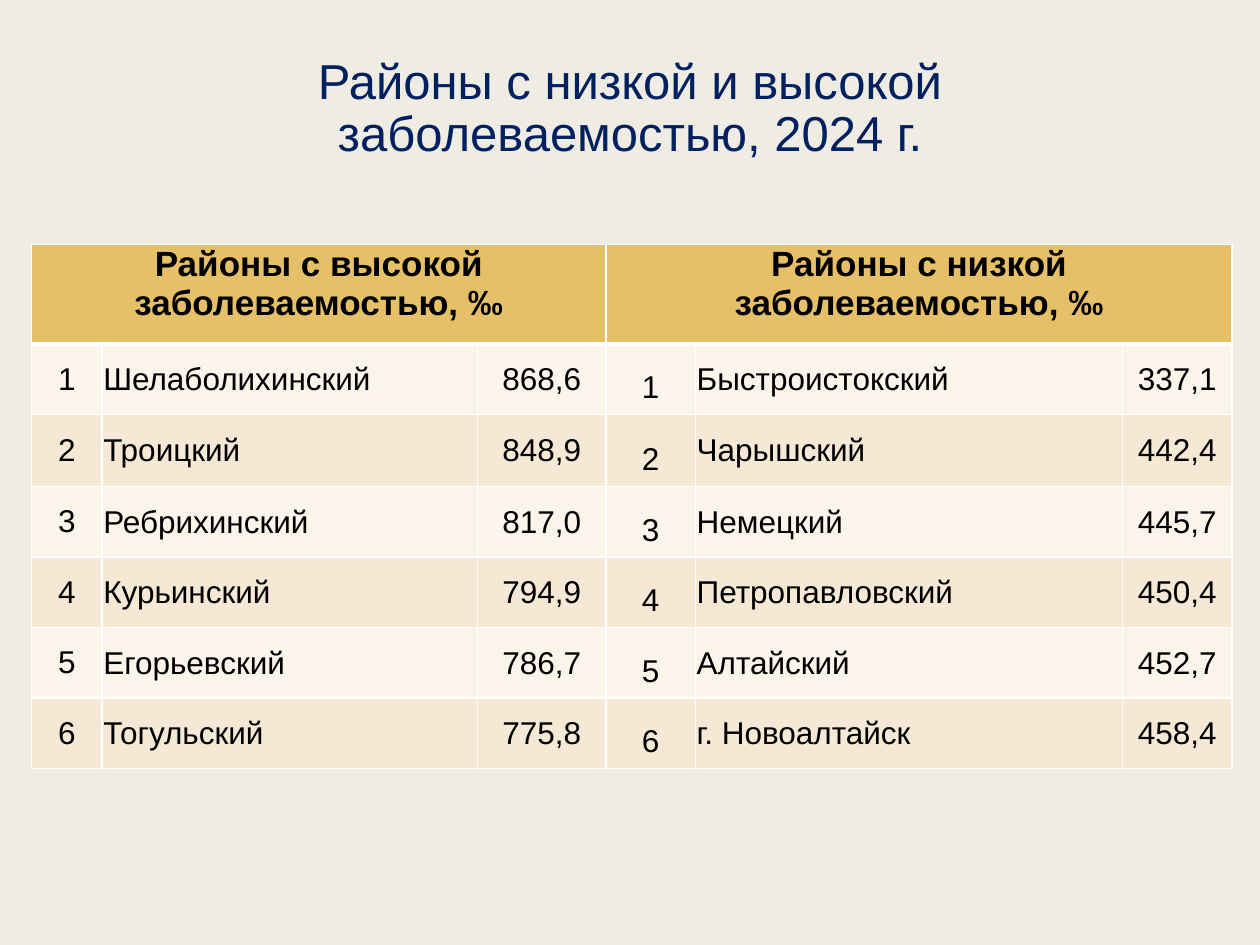
from lxml.etree import SubElement
from pptx import Presentation
from pptx.dml.color import RGBColor as RGB
from pptx.enum.text import MSO_ANCHOR as Anchor, PP_ALIGN as Align
from pptx.oxml.ns import qn
from pptx.util import Inches, Pt

THEME = {
    "font": "Arial", "background": "EFEDE3", "title": "002060", "text": "000000",
    "header": "E6C069", "bands": ("FAF4EB", "F5E8D4"), "border": "FFFFFF",
    "title_size": 28, "header_size": 20, "body_size": 18,
}
HEADERS = ("Районы с высокой заболеваемостью, ‰", "Районы с низкой заболеваемостью, ‰")
HIGH = (("Шелаболихинский", "868,6"), ("Троицкий", "848,9"), ("Ребрихинский", "817,0"),
        ("Курьинский", "794,9"), ("Егорьевский", "786,7"), ("Тогульский", "775,8"))
LOW = (("Быстроистокский", "337,1"), ("Чарышский", "442,4"), ("Немецкий", "445,7"),
       ("Петропавловский", "450,4"), ("Алтайский", "452,7"), ("г. Новоалтайск", "458,4"))
COL_WIDTHS = (0.56, 2.98, 1.02, 0.71, 3.39, 0.87)
ROW_HEIGHTS = (0.79, 0.56, 0.57, 0.56, 0.56, 0.56, 0.56)
# Side margin, top margin, alignment and line spacing of each body column
NAME = (0.01, 0.01, Align.LEFT, None)
VALUE = (0.01, 0.01, Align.CENTER, None)
COL_FORMATS = ((0.07, 0, Align.CENTER, None), NAME, VALUE,
               (0.04, 0, Align.CENTER, 1.5), NAME, VALUE)


def write(p, text, align, spacing, size, color, bold=False):
    p.text = text
    p.alignment, p.line_spacing = align, spacing
    for r in p.runs:
        r.font.color.rgb = RGB.from_string(color)
        for name, value in {"name": THEME["font"], "size": Pt(size), "bold": bold}.items():
            setattr(r.font, name, value)


def style_cell(cell, fill, top, bottom):
    """Border the cell, with top and bottom widths in points, then fill it."""
    tcPr = cell._tc.get_or_add_tcPr()
    for side, width in {"L": 1, "R": 1, "T": top, "B": bottom}.items():
        ln = SubElement(tcPr, qn(f"a:ln{side}"), w=str(Pt(width)))
        solid = SubElement(ln, qn("a:solidFill"))
        SubElement(solid, qn("a:srgbClr"), val=THEME["border"])
    cell.fill.solid()
    cell.fill.fore_color.rgb = RGB.from_string(fill)


prs = Presentation()
prs.slide_width, prs.slide_height = Inches(10), Inches(7.5)
s = prs.slides.add_slide(prs.slide_layouts[6])
s.background.fill.solid()
s.background.fill.fore_color.rgb = RGB.from_string(THEME["background"])

title = s.shapes.add_textbox(Inches(0), Inches(0.36), Inches(10), Inches(1.02))
tf = title.text_frame
tf.word_wrap = True
tf.vertical_anchor = Anchor.MIDDLE
write(tf.paragraphs[0], "Районы с низкой и высокой\vзаболеваемостью, 2024 г.",
      Align.CENTER, 0.89, THEME["title_size"], THEME["title"])

table = s.shapes.add_table(len(ROW_HEIGHTS), len(COL_WIDTHS), Inches(0.25), Inches(1.94),
                           Inches(sum(COL_WIDTHS)), Inches(sum(ROW_HEIGHTS))).table
for column, width in zip(table.columns, COL_WIDTHS):
    column.width = Inches(width)
for row, height in zip(table.rows, ROW_HEIGHTS):
    row.height = Inches(height)

for cell in table.rows[0].cells:
    style_cell(cell, THEME["header"], 1, 3)
for col, text in zip((0, 3), HEADERS):
    cell = table.cell(0, col)
    cell.merge(table.cell(0, col + 2))
    cell.margin_left = cell.margin_right = Inches(0.04)
    cell.margin_top = cell.margin_bottom = 0
    write(cell.text_frame.paragraphs[0], text, Align.CENTER, None,
          THEME["header_size"], THEME["text"], bold=True)

for rank, (high, low) in enumerate(zip(HIGH, LOW), 1):
    texts = (str(rank), *high, str(rank), *low)
    for col, (text, (side, top, align, spacing)) in enumerate(zip(texts, COL_FORMATS)):
        cell = table.cell(rank, col)
        style_cell(cell, THEME["bands"][(rank - 1) % 2], 3 if rank == 1 else 1, 1)
        formats = {"margin_left": Inches(side), "margin_right": Inches(side),
                   "margin_top": Inches(top), "margin_bottom": 0,
                   "vertical_anchor": Anchor.MIDDLE}
        for name, value in formats.items():
            setattr(cell, name, value)
        write(cell.text_frame.paragraphs[0], text, align, spacing,
              THEME["body_size"], THEME["text"])

prs.save("out.pptx")
